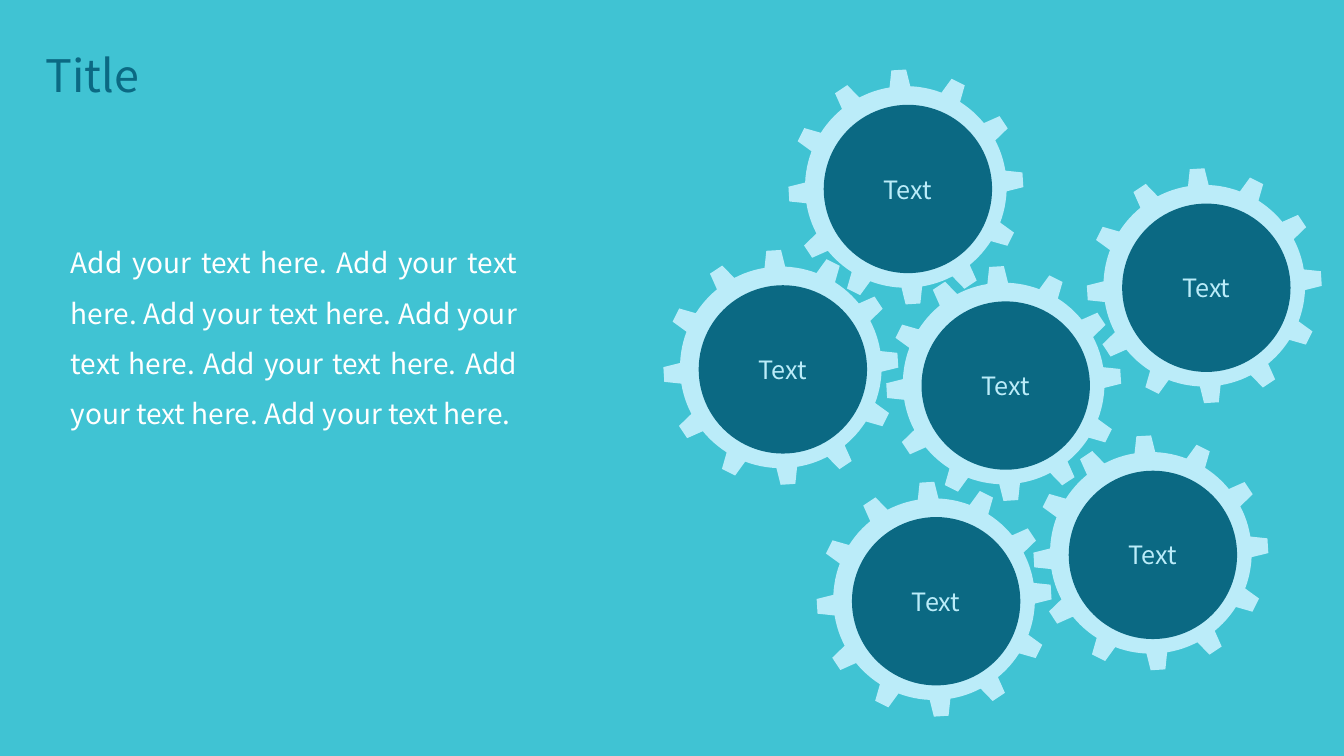
from dataclasses import dataclass
from math import cos, radians, sin

from lxml.etree import SubElement
from pptx import Presentation
from pptx.dml.color import RGBColor as Color
from pptx.enum.shapes import MSO_SHAPE as Preset
from pptx.enum.text import MSO_ANCHOR as Anchor, MSO_AUTO_SIZE as AutoSize, PP_ALIGN as Align
from pptx.oxml.ns import qn
from pptx.util import Inches, Pt


@dataclass(frozen=True)
class Theme:
    """Colours, font and type sizes of the slide."""
    background: Color = Color.from_string("40C3D3")
    dark: Color = Color.from_string("0B6983")
    light: Color = Color.from_string("BBECF9")
    white: Color = Color.from_string("FFFFFF")
    font: str = "Noto Sans CJK JP"
    title_size: int = 32
    body_size: int = 20
    gear_size: int = 18


THEME = Theme()

TITLE_BOX = (0.35, 0.18, 7.29, 1.18)
BODY_BOX = (0.6, 2.22, 4.63, 3.07)
SENTENCE = "Add your text here."

GEAR_DIAMETER = 2.33
RING_RADIUS = 1.0
DISC_DIAMETER = 1.67
DISC_SHIFT = 0.02
TOOTH_COUNT = 12
TOOTH_TIP = (-7.1, 0.1)
TOOTH_BASE = (-9.3, 2.5)
ARC_STEPS = 6

GEARS = [
    (8.79, 2.64, "Text"),
    (6.58, 2.48, "Text"),
    (8.1, 4.78, "Text"),
    (10.25, 4.32, "Text"),
    (7.82, 0.69, "Text"),
    (10.78, 1.67, "Text"),
]


def place(shape, box):
    """Move a shape to a box given in inches."""
    shape.left, shape.top, shape.width, shape.height = map(Inches, box)


def write(shape, text, size, color, align, anchor, line_spacing=1.0):
    """Fill a shape with one formatted paragraph."""
    frame = shape.text_frame
    frame.word_wrap = True
    frame.auto_size = AutoSize.NONE
    frame.vertical_anchor = anchor
    para = frame.paragraphs[0]
    para.alignment = align
    para.line_spacing = line_spacing
    para.space_before = Pt(0)
    span = para.add_run()
    span.text = text
    span.font.name = THEME.font
    span.font.size = Pt(size)
    span.font.color.rgb = color
    return para


def paint(shape, color):
    """Give a shape a flat fill without outline or shadow."""
    shape.shadow.inherit = False
    shape.fill.solid()
    shape.fill.fore_color.rgb = color
    shape.line.fill.background()


def add_title(page, box):
    """Place the slide title in its placeholder."""
    title = page.shapes.title
    place(title, box)
    write(title, "Title", THEME.title_size, THEME.dark, Align.LEFT, Anchor.MIDDLE, 0.9)


def add_body(page, box):
    """Place the justified paragraph, without bullet, in the body placeholder."""
    body = page.placeholders[1]
    place(body, box)
    text = " ".join([SENTENCE] * 7)
    para = write(body, text, THEME.body_size, THEME.white, Align.JUSTIFY, Anchor.TOP, 1.5)
    properties = para._p.get_or_add_pPr()
    properties.set("marL", "0")
    properties.set("indent", "0")
    SubElement(properties, qn("a:buNone"))


def gear_outline(center_x, center_y):
    """Return the outline points of a gear, tooth by tooth."""
    pitch = 360 / TOOTH_COUNT
    base_start, base_end = TOOTH_BASE
    gap = pitch + base_start - base_end
    tip = [(angle, GEAR_DIAMETER / 2) for angle in TOOTH_TIP]
    rim = [(base_end + gap * step / ARC_STEPS, RING_RADIUS) for step in range(ARC_STEPS + 1)]
    return [
        (Inches(center_x + radius * sin(radians(angle + pitch * tooth))),
         Inches(center_y - radius * cos(radians(angle + pitch * tooth))))
        for tooth in range(TOOTH_COUNT)
        for angle, radius in tip + rim
    ]


def add_gear(page, left, top, label):
    """Draw a toothed ring with a labelled disc, grouped together."""
    group = page.shapes.add_group_shape()
    center_x, center_y = left + GEAR_DIAMETER / 2, top + GEAR_DIAMETER / 2
    points = gear_outline(center_x, center_y)
    builder = group.shapes.build_freeform(*points[0])
    builder.add_line_segments(points[1:], close=True)
    paint(builder.convert_to_shape(), THEME.light)

    inset = DISC_SHIFT - DISC_DIAMETER / 2
    box = (center_x + inset, center_y + inset, DISC_DIAMETER, DISC_DIAMETER)
    disc = group.shapes.add_shape(Preset.OVAL, *map(Inches, box))
    paint(disc, THEME.dark)
    write(disc, label, THEME.gear_size, THEME.light, Align.CENTER, Anchor.MIDDLE)


def main():
    """Build the slide and save the deck."""
    deck = Presentation()
    deck.slide_width, deck.slide_height = Inches(13.33), Inches(7.5)
    page = deck.slides.add_slide(deck.slide_layouts[1])
    page.background.fill.solid()
    page.background.fill.fore_color.rgb = THEME.background
    add_title(page, TITLE_BOX)
    add_body(page, BODY_BOX)
    for left, top, label in GEARS:
        add_gear(page, left, top, label)
    deck.save("out.pptx")


if __name__ == "__main__":
    main()
